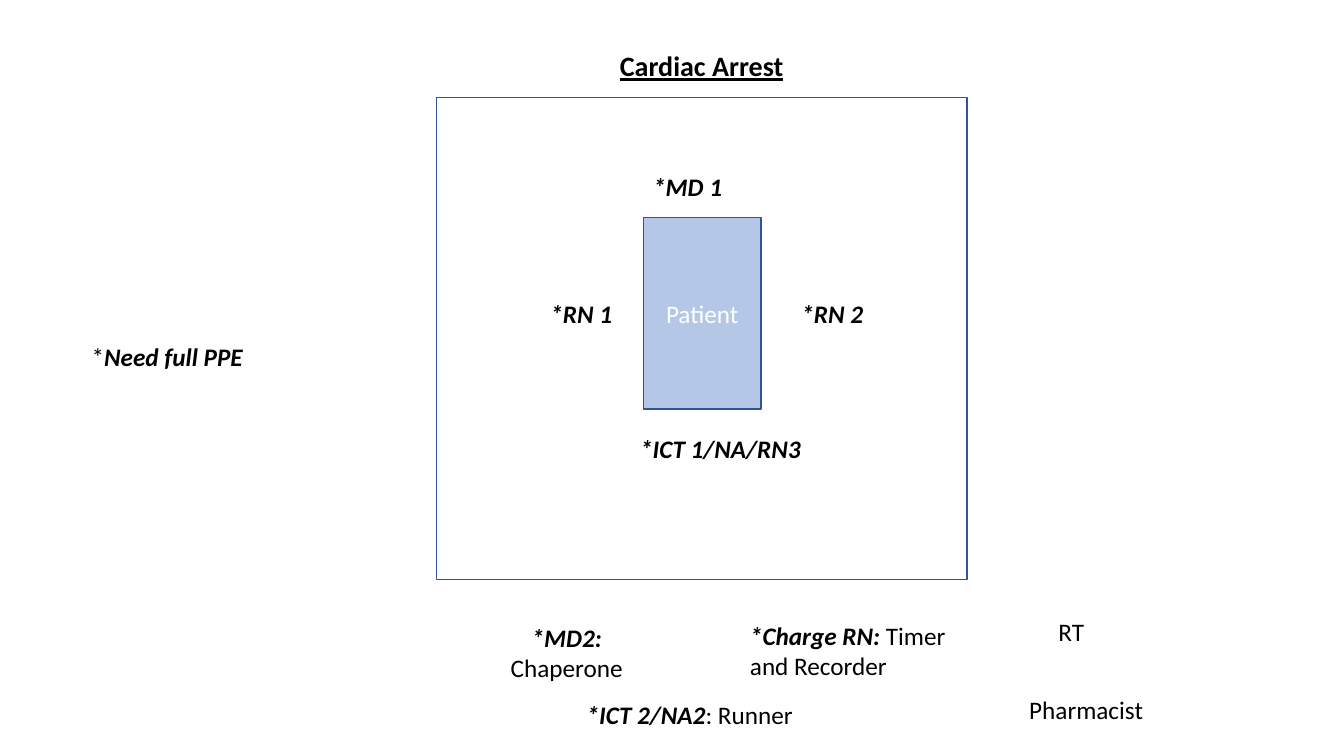
from pptx import Presentation
from pptx.dml.color import RGBColor
from pptx.enum.shapes import MSO_SHAPE
from pptx.enum.text import MSO_ANCHOR, MSO_AUTO_SIZE, PP_ALIGN
from pptx.util import Inches, Pt

COLORS = {"text": "000000", "white": "FFFFFF", "outline": "325491", "bed": "B4C7E7"}
TITLE_ONLY = 5


class RoomPage:
    """Holds the text style and the slide being drawn."""

    def __init__(self, deck, font="Calibri", size=18):
        self.page = deck.slides.add_slide(deck.slide_layouts[TITLE_ONLY])
        self.font = font
        self.size = size

    def color(self, name):
        return RGBColor.from_string(COLORS[name])

    def place(self, shape, left, top, width, height):
        shape.left, shape.top = Inches(left), Inches(top)
        shape.width, shape.height = Inches(width), Inches(height)

    def add_span(self, para, text, color="text", strong=False, size=None):
        """Add one run; strong means bold italic."""
        span = para.add_run()
        span.text = text
        font = span.font
        font.name = self.font
        font.size = Pt(size or self.size)
        font.color.rgb = self.color(color)
        font.bold = font.italic = strong
        return span

    def title(self, text, *place):
        box = self.page.shapes.title
        self.place(box, *place)
        frame = box.text_frame
        frame.word_wrap = True
        frame.auto_size = MSO_AUTO_SIZE.NONE
        frame.vertical_anchor = MSO_ANCHOR.TOP
        para = frame.paragraphs[0]
        para.alignment = PP_ALIGN.CENTER
        span = self.add_span(para, text, size=20)
        span.font.bold = span.font.underline = True

    def rectangle(self, fill, *place, text=None):
        box = self.page.shapes.add_shape(MSO_SHAPE.RECTANGLE, *map(Inches, place))
        box.shadow.inherit = False
        box.fill.solid()
        box.fill.fore_color.rgb = self.color(fill)
        box.line.color.rgb = self.color("outline")
        box.line.width = Pt(1)
        if text:
            box.text_frame.vertical_anchor = MSO_ANCHOR.MIDDLE
            para = box.text_frame.paragraphs[0]
            para.alignment = PP_ALIGN.CENTER
            self.add_span(para, text, "white")

    def label(self, spans, *place, align=PP_ALIGN.LEFT):
        """Add a text box from (text, strong) pairs."""
        box = self.page.shapes.add_textbox(*map(Inches, place))
        frame = box.text_frame
        frame.word_wrap = True
        frame.auto_size = MSO_AUTO_SIZE.SHAPE_TO_FIT_TEXT
        para = frame.paragraphs[0]
        para.alignment = align
        for text, strong in spans:
            self.add_span(para, text, strong=strong)


def main():
    deck = Presentation()
    deck.slide_width, deck.slide_height = Inches(13.33), Inches(7.5)
    room = RoomPage(deck)

    room.title("Cardiac Arrest", 5.31, 0.43, 3.3, 0.44)
    room.rectangle("white", 4.33, 0.97, 5.26, 4.78)
    room.rectangle("bed", 6.38, 2.16, 1.17, 1.9, text="Patient")

    line, two_lines = 0.4, 0.71
    bedside_team = [
        ("*MD 1", 6.38, 1.65, 1.17),
        ("*RN 1", 5.36, 2.91, 0.88),
        ("*RN 2", 7.85, 2.91, 0.88),
        ("*ICT 1/NA/RN3", 6.25, 4.25, 1.89),
    ]
    for role, left, top, width in bedside_team:
        room.label([(role, True)], left, top, width, line)

    room.label([("*MD2: ", True), ("Chaperone", False)],
               4.93, 6.12, 1.38, two_lines, align=PP_ALIGN.CENTER)
    room.label([("*Charge RN: ", True), ("Timer and Recorder", False)],
               7.34, 6.1, 2.33, two_lines)
    room.label([("*ICT 2/NA2", True), (": Runner", False)], 5.72, 6.89, 3.26, line)
    room.label([("RT", False)], 10.4, 6.07, 0.53, line)
    room.label([("Pharmacist", False)], 10.11, 6.84, 1.46, line)
    room.label([("*", False), ("Need full PPE", True)], 0.81, 3.34, 2.25, line)

    deck.save("out.pptx")


if __name__ == "__main__":
    main()
